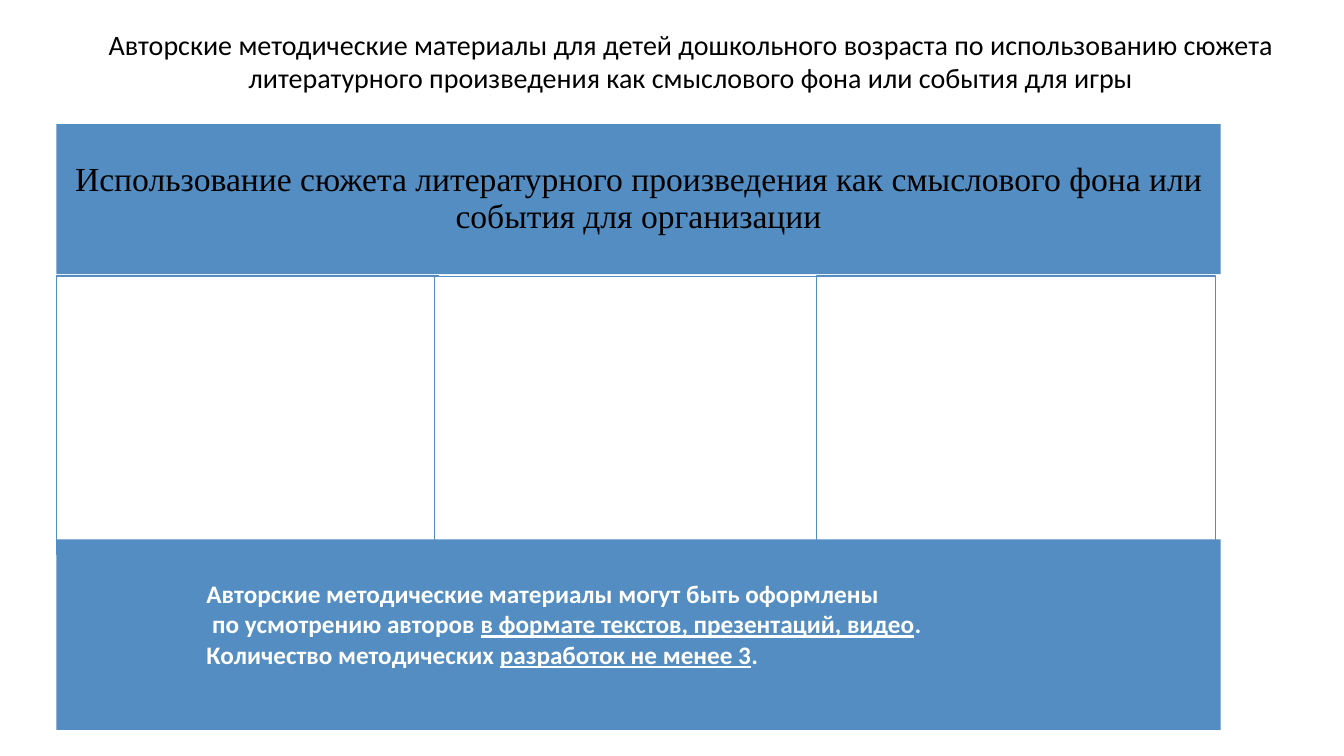
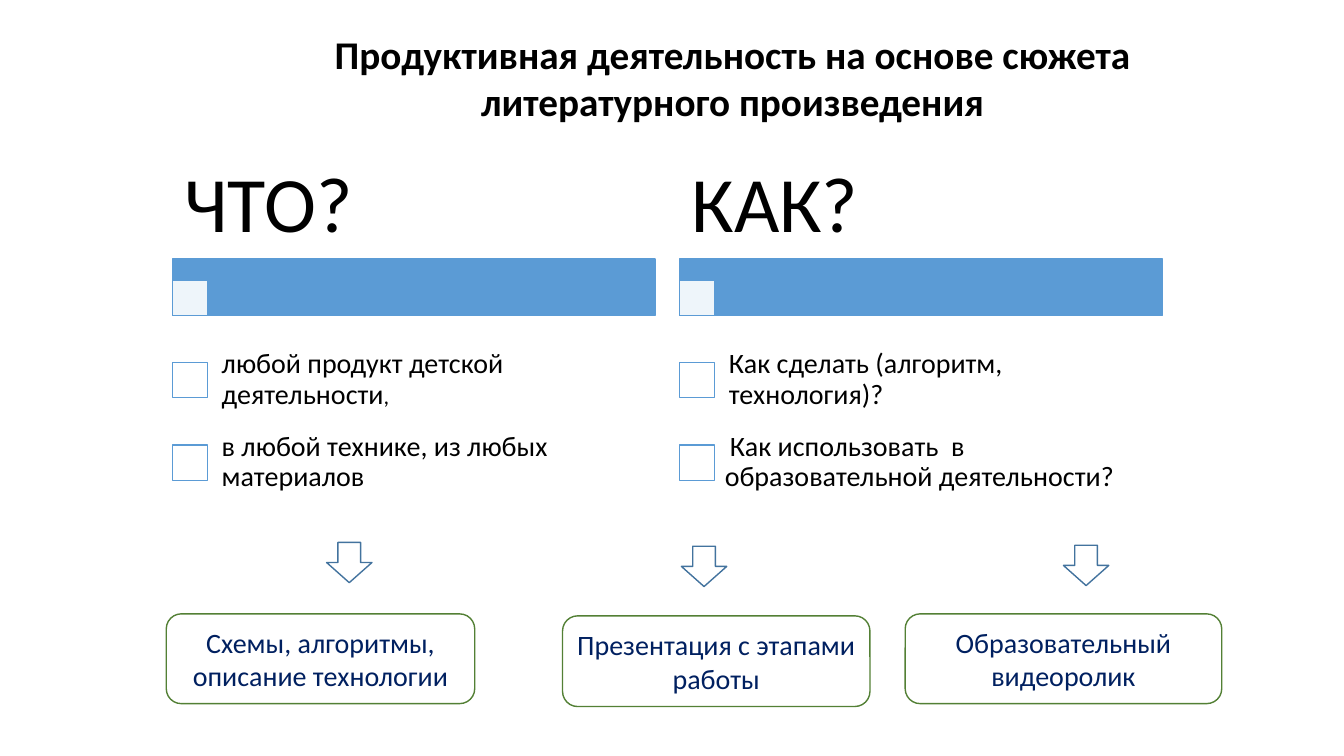
from lxml.etree import SubElement
from pptx import Presentation
from pptx.dml.color import RGBColor
from pptx.enum.shapes import MSO_SHAPE as Shape
from pptx.enum.text import MSO_ANCHOR as Anchor, MSO_AUTO_SIZE as AutoSize, PP_ALIGN as Align
from pptx.oxml.ns import qn
from pptx.util import Pt

BLACK = RGBColor(0x00, 0x00, 0x00)
WHITE = RGBColor(0xFF, 0xFF, 0xFF)
STEEL = RGBColor(0x53, 0x8D, 0xC1)
BLUE = RGBColor(0x5B, 0x9B, 0xD5)
ARROW_BLUE = RGBColor(0x43, 0x73, 0x9E)
GREEN = RGBColor(0x53, 0x80, 0x35)
NAVY = RGBColor(0x00, 0x20, 0x60)

MATERIALS_TITLE = ("Авторские методические материалы для детей дошкольного возраста по использованию "
                   "сюжета литературного произведения как смыслового фона или события для игры")
BAND_TEXT = ("Использование сюжета литературного произведения как смыслового фона "
             "или события для организации")
# Each paragraph: (plain, underlined, plain)
NOTE = [
    ("Авторские методические материалы могут быть оформлены", "", ""),
    (" по усмотрению авторов ", "в формате текстов, презентаций, видео", "."),
    ("Количество методических ", "разработок не менее 3", "."),
]
# Left, width, height of the empty cells
CELLS = [(40.3, 272.9, 198.7), (310.3, 272.9, 200.9), (583.2, 285.1, 198.7)]

ACTIVITY_TITLE = "Продуктивная деятельность на основе сюжета литературного произведения"
# Heading, then items: (inset, [(text, size), ...])
QUESTIONS = [
    ("ЧТО?", [
        (11.5, [("любой продукт детской деятельности", 20), (",", 16)]),
        (11.5, [("в любой технике, из любых материалов", 20)]),
    ]),
    ("КАК?", [
        (11.5, [("Как сделать (алгоритм, технология)?", 20)]),
        (8.64, [(" ", 16), ("Как использовать  в образовательной деятельности?", 20)]),
    ]),
]
# Text, box (left, top, width, height), arrow (left, top)
OUTCOMES = [
    ("Схемы, алгоритмы, описание технологии", (118.8, 438.5, 220.3, 64.1), (233.3, 387.4)),
    ("Презентация с этапами работы", (401.8, 439.9, 219.6, 64.8), (486.7, 390.2)),
    ("Образовательный видеоролик", (646.6, 438.5, 226.1, 64.1), (759.6, 389.5)),
]

COLUMN_LEFT, COLUMN_STEP, COLUMN_WIDTH = 123.1, 362.2, 344.9
HEADING_TOP, HEADING_HEIGHT = 111.6, 72.7
BAR_TOP, BAR_HEIGHT = 185, 40.3
CHECK = 25.2
ROW_TOP, ROW_HEIGHT = 241.9, 59.05
TEXT_INDENT = 23.8
ARROW_SIZE = (32.4, 28.8)


def points(*lengths):
    return [Pt(length) for length in lengths]


def add_box(page, kind, place, fill=None, line=None, opacity=None):
    box = page.shapes.add_shape(kind, *points(*place))
    box.shadow.inherit = False
    if fill is None:
        box.fill.background()
    else:
        box.fill.solid()
        box.fill.fore_color.rgb = fill
    if opacity is not None:
        color = box.fill._xPr.find(f"{qn('a:solidFill')}/{qn('a:srgbClr')}")
        SubElement(color, qn("a:alpha"), val=str(opacity * 1000))
    if line is None:
        box.line.fill.background()
    else:
        box.line.color.rgb = line
        box.line.width = Pt(1)
    return box


def set_frame(frame, anchor=Anchor.MIDDLE, inset_x=7.2, inset_y=3.6):
    frame.word_wrap = True
    frame.auto_size = AutoSize.NONE
    frame.vertical_anchor = anchor
    frame.margin_left = frame.margin_right = Pt(inset_x)
    frame.margin_top = frame.margin_bottom = Pt(inset_y)
    return frame


def style(para, size, color=BLACK, bold=False, align=Align.LEFT, spacing=1.0, name="Calibri"):
    para.alignment = align
    para.line_spacing = spacing
    font = para.font
    font.name, font.size, font.bold = name, Pt(size), bold
    font.color.rgb = color


def add_text_box(page, place, **frame_options):
    box = page.shapes.add_textbox(*points(*place))
    return set_frame(box.text_frame, **frame_options)


def add_page(deck, title, place, size, bold=False):
    page = deck.slides.add_slide(deck.slide_layouts[5])
    head = page.shapes.title
    head.left, head.top, head.width, head.height = points(*place)
    frame = set_frame(head.text_frame, Anchor.TOP)
    frame.text = title
    style(frame.paragraphs[0], size, bold=bold, align=Align.CENTER)
    return page


def build_materials(deck):
    page = add_page(deck, MATERIALS_TITLE, (54.7, 15.8, 877.7, 55.4), 20)
    band = add_box(page, Shape.RECTANGLE, (40.3, 88.6, 831.6, 107.3), STEEL)
    frame = set_frame(band.text_frame, inset_y=7.2)
    frame.text = BAND_TEXT
    style(frame.paragraphs[0], 24, align=Align.CENTER, spacing=0.9, name="Times New Roman")

    for left, width, height in CELLS:
        add_box(page, Shape.RECTANGLE, (left, 197.3, width, height), WHITE, STEEL)

    add_box(page, Shape.RECTANGLE, (40.3, 385.2, 831.6, 136.1), STEEL)
    frame = add_text_box(page, (140.4, 409.7, 691.9, 72.7), anchor=Anchor.TOP)
    for index, parts in enumerate(NOTE):
        para = frame.add_paragraph() if index else frame.paragraphs[0]
        style(para, 18, WHITE, bold=True)
        for position, text in enumerate(parts):
            if text:
                span = para.add_run()
                span.text = text
                span.font.underline = position == 1


def add_question(page, left, heading, items):
    add_box(page, Shape.RECTANGLE, (left, BAR_TOP, COLUMN_WIDTH, BAR_HEIGHT), BLUE, BLUE)
    add_box(page, Shape.RECTANGLE, (left, BAR_TOP + BAR_HEIGHT - CHECK, CHECK, CHECK),
            WHITE, BLUE, opacity=90)
    frame = add_text_box(page, (left, HEADING_TOP, COLUMN_WIDTH, HEADING_HEIGHT),
                         inset_x=8.64, inset_y=5.76)
    frame.text = heading
    style(frame.paragraphs[0], 56, spacing=0.9)

    for row, (inset, spans) in enumerate(items):
        top = ROW_TOP + row * ROW_HEIGHT
        add_box(page, Shape.RECTANGLE, (left, top + (ROW_HEIGHT - CHECK) / 2, CHECK, CHECK),
                WHITE, BLUE)
        frame = add_text_box(
            page, (left + TEXT_INDENT, top, COLUMN_WIDTH - TEXT_INDENT, ROW_HEIGHT),
            inset_x=inset, inset_y=inset)
        para = frame.paragraphs[0]
        style(para, 20, spacing=0.9)
        for text, size in spans:
            span = para.add_run()
            span.text = text
            span.font.size = Pt(size)


def build_activity(deck):
    page = add_page(deck, ACTIVITY_TITLE, (198, 18, 650.2, 74.9), 28, bold=True)
    for column, (heading, items) in enumerate(QUESTIONS):
        add_question(page, COLUMN_LEFT + column * COLUMN_STEP, heading, items)
    for text, place, arrow in OUTCOMES:
        box = add_box(page, Shape.ROUNDED_RECTANGLE, place, line=GREEN)
        frame = set_frame(box.text_frame)
        frame.text = text
        style(frame.paragraphs[0], 20, NAVY, align=Align.CENTER)
        add_box(page, Shape.DOWN_ARROW, arrow + ARROW_SIZE, line=ARROW_BLUE)


def main():
    deck = Presentation()
    deck.slide_width, deck.slide_height = points(960, 540)
    build_materials(deck)
    build_activity(deck)
    deck.save("out.pptx")


if __name__ == "__main__":
    main()
